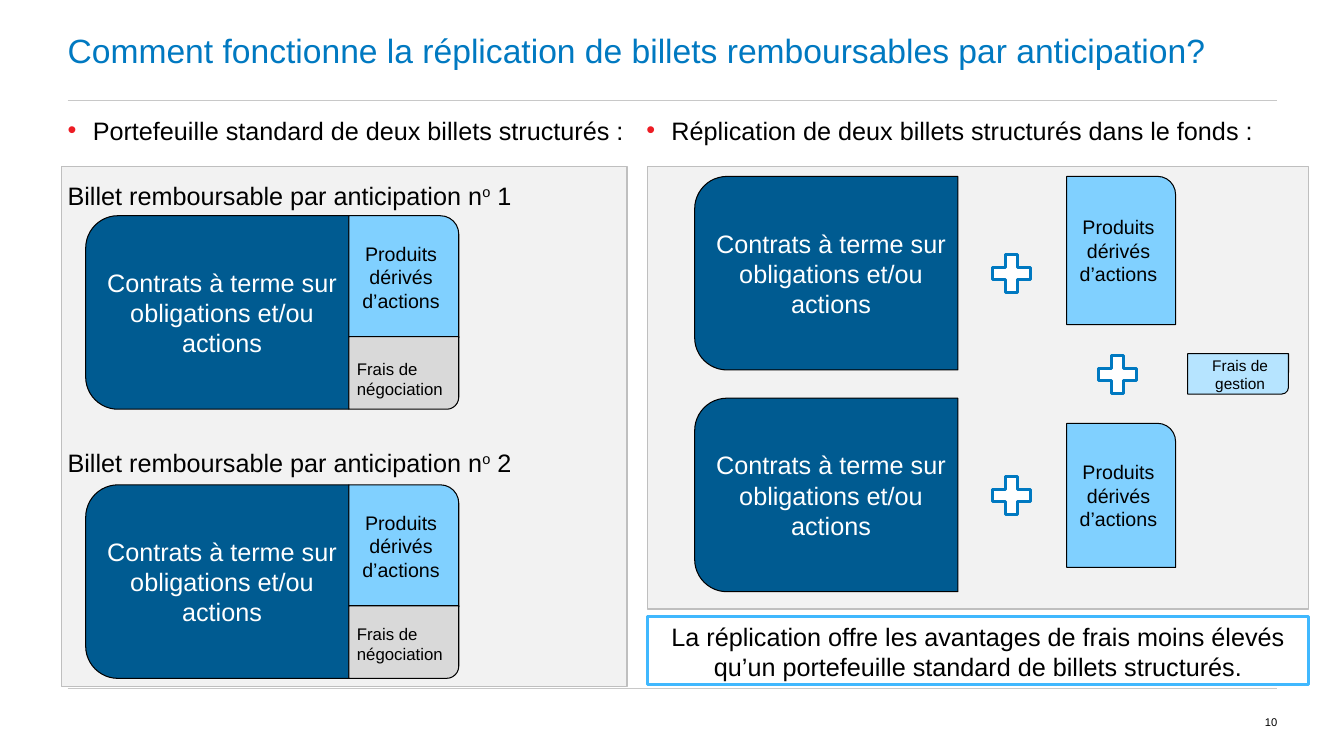
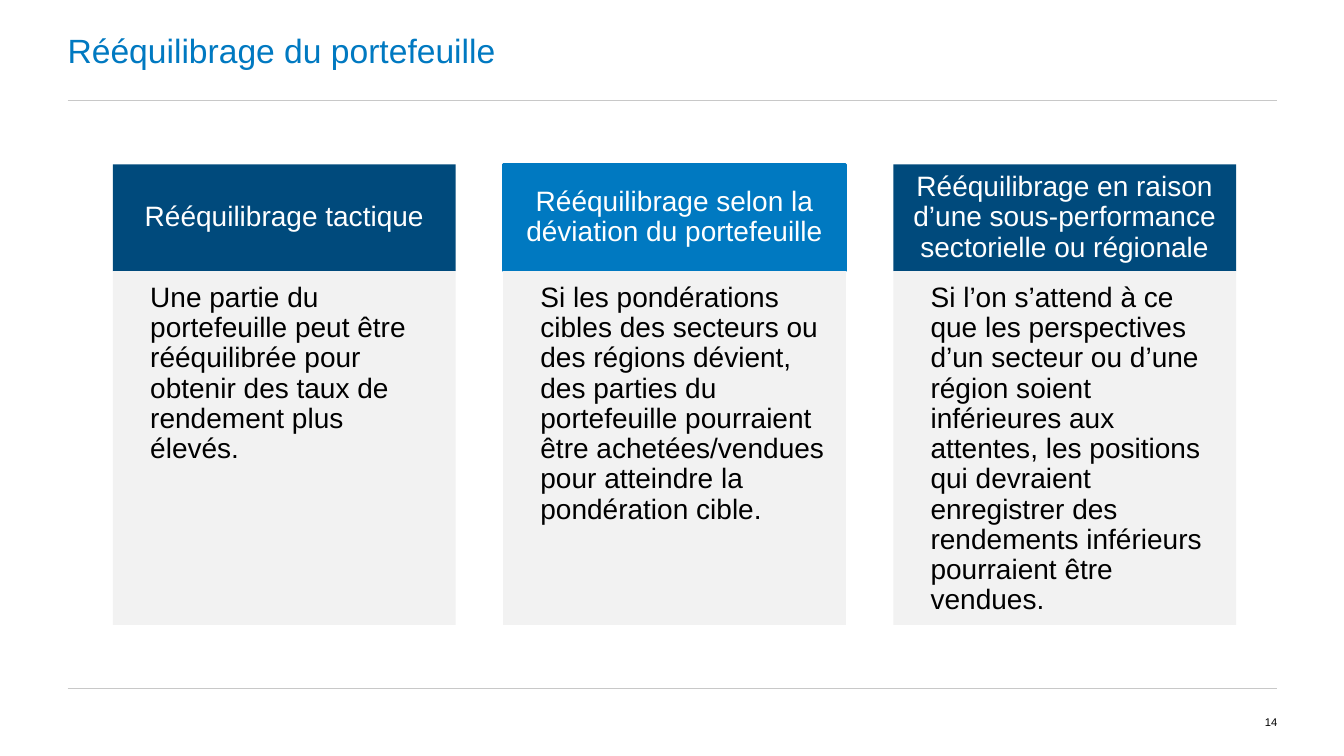
from dataclasses import dataclass

import lxml.etree
import pptx
import pptx.dml.color
import pptx.enum.shapes
import pptx.enum.text
import pptx.oxml.ns
import pptx.util

Inches = pptx.util.Inches
Shapes = pptx.enum.shapes.MSO_SHAPE
Align = pptx.enum.text.PP_ALIGN
Anchor = pptx.enum.text.MSO_ANCHOR
qn = pptx.oxml.ns.qn


@dataclass(frozen=True)
class Theme:
    font: str = "Arial"
    # Colours
    black: str = "000000"
    white: str = "FFFFFF"
    blue: str = "0079C1"
    navy: str = "004A7C"
    contracts: str = "005B91"
    derivatives: str = "80D0FF"
    management: str = "B6E4FF"
    trading: str = "D9D9D9"
    panel: str = "F2F2F2"
    panel_edge: str = "BFBFBF"
    callout_edge: str = "40B8FE"
    rule: str = "C8C8C8"
    bullet: str = "ED1C24"
    # Type sizes
    title_size: int = 24
    column_size: int = 20
    body_size: int = 18
    derivatives_size: int = 14
    trading_size: int = 12
    management_size: int = 11
    number_size: int = 8


THEME = Theme()
CONTRACTS = "Contrats à terme sur obligations et/ou actions"
DERIVATIVES = "Produits dérivés d’actions"

COLUMNS = [
    ("Rééquilibrage tactique", THEME.navy,
     "Une partie du portefeuille peut être rééquilibrée pour obtenir "
     "des taux de rendement plus élevés."),
    ("Rééquilibrage selon la déviation du portefeuille", THEME.blue,
     "Si les pondérations cibles des secteurs ou des régions dévient, "
     "des parties du portefeuille pourraient être achetées/vendues "
     "pour atteindre la pondération cible."),
    ("Rééquilibrage en raison d’une sous-performance sectorielle ou régionale",
     THEME.navy,
     "Si l’on s’attend à ce que les perspectives d’un secteur ou d’une région "
     "soient inférieures aux attentes, les positions qui devraient enregistrer "
     "des rendements inférieurs pourraient être vendues."),
]


def rgb(color):
    return pptx.dml.color.RGBColor.from_string(color)


# Text
def set_bullet(para, bullet, indent):
    """Give a paragraph a hanging bullet, or an indent without one."""
    properties = para._p.get_or_add_pPr()
    properties.set("marL", str(Inches(indent)))
    properties.set("indent", str(Inches(-indent if bullet else 0)))
    if not bullet:
        lxml.etree.SubElement(properties, qn("a:buNone"))
        return
    color = lxml.etree.SubElement(properties, qn("a:buClr"))
    lxml.etree.SubElement(color, qn("a:srgbClr"), val=THEME.bullet)
    lxml.etree.SubElement(properties, qn("a:buFont"), typeface=THEME.font)
    lxml.etree.SubElement(properties, qn("a:buChar"), char="•")


def write(frame, text, size=THEME.body_size, color=THEME.black,
          align=Align.LEFT, before=0, spacing=1.0, bullet=False, indent=0):
    """Add a paragraph; pieces between carets are superscript."""
    para = frame.add_paragraph() if frame.text else frame.paragraphs[0]
    set_bullet(para, bullet, indent)
    para.alignment = align
    para.space_before = pptx.util.Pt(before)
    para.line_spacing = spacing
    for index, piece in enumerate(text.split("^")):
        span = para.add_run()
        span.text = piece
        span.font.name = THEME.font
        span.font.size = pptx.util.Pt(size)
        span.font.color.rgb = rgb(color)
        if index % 2:
            span._r.get_or_add_rPr().set("baseline", "30000")


def prepare_frame(shape, anchor=Anchor.TOP, margins=(0, 0, 0, 0)):
    frame = shape.text_frame
    frame.word_wrap = True
    frame.auto_size = pptx.enum.text.MSO_AUTO_SIZE.NONE
    frame.vertical_anchor = anchor
    (frame.margin_left, frame.margin_top,
     frame.margin_right, frame.margin_bottom) = map(Inches, margins)
    return frame


def add_label(page, area, text, anchor=Anchor.TOP, **text_format):
    box = page.shapes.add_textbox(*map(Inches, area))
    write(prepare_frame(box, anchor), text, **text_format)


def place(shape, area):
    shape.left, shape.top, shape.width, shape.height = map(Inches, area)


# Shapes
def add_shape(page, kind, area, fill, line=None, width=0.75):
    shape = page.shapes.add_shape(kind, *map(Inches, area))
    shape.shadow.inherit = False
    shape.fill.solid()
    shape.fill.fore_color.rgb = rgb(fill)
    if line:
        shape.line.color.rgb = rgb(line)
        shape.line.width = pptx.util.Pt(width)
    else:
        shape.line.fill.background()
    return shape


def add_contracts(page, left, top):
    """Block rounded on its left side: a turned shape with upright text."""
    width, height = 2.61, 1.92
    shift = (width - height) / 2
    shape = add_shape(page, Shapes.ROUND_2_SAME_RECTANGLE,
                      (left + shift, top - shift, height, width),
                      THEME.contracts, THEME.black)
    shape.rotation = 270
    frame = prepare_frame(shape, Anchor.MIDDLE)
    frame._txBody.bodyPr.set("vert", "vert")
    write(frame, CONTRACTS, color=THEME.white, align=Align.CENTER)


def add_derivatives(page, area):
    shape = add_shape(page, Shapes.ROUND_1_RECTANGLE, area,
                      THEME.derivatives, THEME.black)
    write(prepare_frame(shape, Anchor.MIDDLE), DERIVATIVES,
          size=THEME.derivatives_size, align=Align.CENTER)


def add_fee(page, area, fill):
    """Block rounded at its lower right corner."""
    shape = add_shape(page, Shapes.ROUND_1_RECTANGLE, area, fill, THEME.black)
    shape.element.spPr.xfrm.set("flipV", "1")


def add_plus(page, left, top):
    add_shape(page, Shapes.MATH_PLUS, (left, top, 0.51, 0.51),
              THEME.white, THEME.blue, 2)


def add_rule(page, top):
    line = page.shapes.add_connector(
        pptx.enum.shapes.MSO_CONNECTOR.STRAIGHT,
        Inches(0.67), Inches(top), Inches(12.67), Inches(top))
    line.line.color.rgb = rgb(THEME.rule)
    line.line.width = pptx.util.Pt(0.75)
    lxml.etree.SubElement(line.element.spPr, qn("a:effectLst"))


# Shared page frame
def add_page(deck, layout, title, number):
    page = deck.slides.add_slide(deck.slide_layouts.get_by_name(layout))
    for top in (1, 6.83):
        add_rule(page, top)
    place(page.shapes.title, (0.67, 0, 12, 1))
    write(prepare_frame(page.shapes.title, Anchor.MIDDLE), title,
          size=THEME.title_size, color=THEME.blue)
    add_label(page, (12, 6.83, 0.67, 0.67), number, Anchor.MIDDLE,
              size=THEME.number_size, align=Align.RIGHT)
    return page


# Pages
def add_replication_page(deck):
    page = add_page(
        deck, "Title and Content",
        "Comment fonctionne la réplication de billets remboursables "
        "par anticipation?", "10")
    for area in ((6.42, 1.65, 6.56, 4.39), (0.61, 1.65, 5.61, 5.16)):
        add_shape(page, Shapes.RECTANGLE, area, THEME.panel,
                  THEME.panel_edge, 1)

    # Headings, with the list in front of the panels
    body = page.placeholders[1]
    page.shapes.element.append(body.element)
    place(body, (0.67, 1.14, 5.94, 3.61))
    frame = prepare_frame(body)
    write(frame, "Portefeuille standard de deux billets structurés :",
          bullet=True, indent=0.25)
    for note, gap in ((1, 25), (2, 169)):
        write(frame, f"Billet remboursable par anticipation n^o^ {note}",
              before=gap)
    add_label(page, (6.41, 1.14, 6.45, 0.3),
              "Réplication de deux billets structurés dans le fonds :",
              bullet=True, indent=0.25)

    # Two standard notes
    for top, fee_top in ((2.14, 3.56), (4.81, 6.19)):
        add_contracts(page, 0.85, top)
        add_derivatives(page, (3.46, top, 1.09, 1.21))
        add_fee(page, (3.46, top + 1.2, 1.09, 0.72), THEME.trading)
        add_label(page, (3.54, fee_top, 1, 0.41), "Frais de négociation",
                  size=THEME.trading_size)

    # The same notes inside the fund
    for top, block_top, height in ((1.75, 1.75, 1.47), (3.95, 4.2, 1.43)):
        add_contracts(page, 6.89, top)
        add_derivatives(page, (10.58, block_top, 1.08, height))
        add_plus(page, 9.78, top + 0.71)
    add_plus(page, 10.83, 3.46)
    add_fee(page, (11.78, 3.51, 1, 0.4), THEME.management)
    add_label(page, (11.8, 3.53, 1, 0.29), "Frais de gestion",
              size=THEME.management_size, align=Align.CENTER)

    # Conclusion
    callout = add_shape(page, Shapes.RECTANGLE, (6.42, 6.12, 6.56, 0.67),
                        THEME.white, THEME.callout_edge, 2)
    write(prepare_frame(callout, margins=(0, 0.04, 0, 0)),
          "La réplication offre les avantages de frais moins élevés "
          "qu’un portefeuille standard de billets structurés.",
          align=Align.CENTER)


def add_rebalancing_page(deck):
    page = add_page(deck, "Title Only", "Rééquilibrage du portefeuille", "14")
    for index, (heading, color, text) in enumerate(COLUMNS):
        left = 1.12 + 3.87 * index
        edge = color if color == THEME.blue else None
        header = add_shape(page, Shapes.RECTANGLE, (left, 1.63, 3.4, 1.06),
                           color, edge, 2)
        write(prepare_frame(header, Anchor.MIDDLE, (0.16, 0.09, 0.16, 0.09)),
              heading, size=THEME.column_size, color=THEME.white,
              align=Align.CENTER, spacing=0.9)
        detail = add_shape(page, Shapes.RECTANGLE, (left, 2.69, 3.4, 3.51),
                           THEME.panel)
        write(prepare_frame(detail, margins=(0.12, 0.12, 0.16, 0.17)),
              text, size=THEME.column_size, spacing=0.9, indent=0.25)


def main():
    deck = pptx.Presentation()
    deck.slide_width, deck.slide_height = Inches(13.33), Inches(7.5)
    add_replication_page(deck)
    add_rebalancing_page(deck)
    deck.save("out.pptx")


if __name__ == "__main__":
    main()
